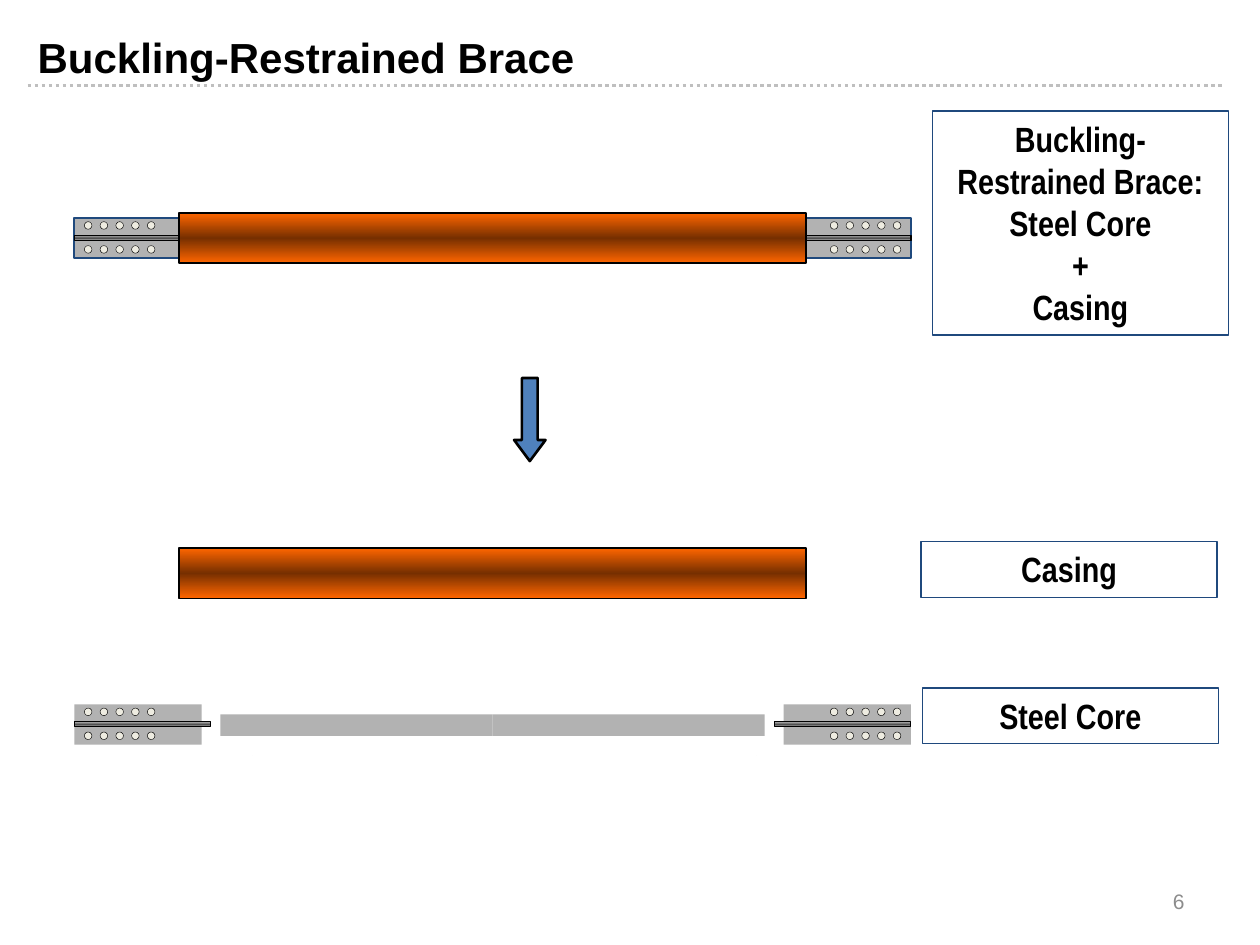
from copy import deepcopy

from lxml.etree import SubElement
from pptx import Presentation
from pptx.dml.color import RGBColor
from pptx.enum.dml import MSO_LINE
from pptx.enum.shapes import MSO_CONNECTOR, MSO_SHAPE
from pptx.enum.text import MSO_ANCHOR, PP_ALIGN
from pptx.oxml.ns import qn
from pptx.util import Inches, Pt

BLACK = RGBColor(0x00, 0x00, 0x00)
RULE_GREY = RGBColor(0xBF, 0xBF, 0xBF)
NUMBER_GREY = RGBColor(0x8C, 0x8C, 0x8C)
STEEL = RGBColor(0xB2, 0xB2, 0xB2)
DARK_STEEL = RGBColor(0x52, 0x52, 0x52)
ORANGE = RGBColor(0xFF, 0x66, 0x00)
BROWN = RGBColor(0x76, 0x2F, 0x00)
CREAM = RGBColor(0xEE, 0xEC, 0xE1)
NAVY = RGBColor(0x1F, 0x49, 0x7D)
BLUE = RGBColor(0x4F, 0x81, 0xBD)

TITLE = "Buckling-Restrained Brace"
PAGE_NUMBER = "6"
LABELS = [
    ("Buckling- Restrained Brace:\vSteel Core\v+\vCasing", (7.4, 0.88, 2.35, 1.78)),
    ("Casing", (7.31, 4.3, 2.35, 0.44)),
    ("Steel Core", (7.32, 5.46, 2.35, 0.44)),
]
BRACE_TOP = 1.73
CORE_TOP = 5.59
CASING_TOPS = {"brace": 1.69, "separate": 4.35}
CENTER = 3.91
HOLE_SIZE = 0.06
HOLE_COLUMNS = [0.67 + 0.125 * column for column in range(5)]
HOLE_ROWS = [0.03, 0.22]


def style(shape, fill=None, line=None, width=1):
    shape.shadow.inherit = False
    if fill is None:
        shape.fill.background()
    elif isinstance(fill, RGBColor):
        shape.fill.solid()
        shape.fill.fore_color.rgb = fill
    else:
        edge, middle = fill
        shape.fill.gradient()
        shape.fill.gradient_angle = 90
        stop_list = shape._element.spPr.find(qn("a:gradFill")).find(qn("a:gsLst"))
        stop_list.append(deepcopy(stop_list[0]))
        stops = zip(shape.fill.gradient_stops, (edge, middle, edge), (0, 0.5, 1))
        for stop, color, position in stops:
            stop.color.rgb = color
            stop.position = position
    if line is None:
        shape.line.fill.background()
    else:
        shape.line.color.rgb = line
        shape.line.width = Pt(width)


def add_shape(shapes, kind, box, *look):
    shape = shapes.add_shape(kind, *map(Inches, box))
    style(shape, *look)
    return shape


def add_casing(shapes, top):
    add_shape(shapes, MSO_SHAPE.RECTANGLE, (1.42, top, 4.98, 0.4), (ORANGE, BROWN), BLACK, 1)


def add_core_half(shapes, top, mirrored, outline, stiffener_width):
    def place(left, offset, width, height):
        x = 2 * CENTER - left - width if mirrored else left
        return x, top + offset, width, height

    def taper_point(x, offset):
        return (2 * CENTER - x if mirrored else x), top + offset

    steel_look = (STEEL, outline, 1.25)
    add_shape(shapes, MSO_SHAPE.RECTANGLE, place(1.75, 0.08, 2.16, 0.17), *steel_look)
    corners = [taper_point(*p) for p in [(1.6, 0.32), (1.76, 0.24), (1.76, 0.08), (1.6, 0)]]
    builder = shapes.build_freeform(*corners[0], scale=Inches(1))
    builder.add_line_segments(corners[1:], close=True)
    style(builder.convert_to_shape(), *steel_look)
    add_shape(shapes, MSO_SHAPE.RECTANGLE, place(0.59, 0, 1.01, 0.32), *steel_look)
    add_shape(shapes, MSO_SHAPE.RECTANGLE, place(0.59, 0.14, 1.08, 0.04),
              (STEEL, DARK_STEEL), BLACK, stiffener_width)
    for row in HOLE_ROWS:
        for column in HOLE_COLUMNS:
            add_shape(shapes, MSO_SHAPE.OVAL, place(column, row, HOLE_SIZE, HOLE_SIZE),
                      CREAM, BLACK, 0.25)


def add_core(slide, top, outline, stiffener_width):
    group = slide.shapes.add_group_shape()
    for mirrored in (False, True):
        add_core_half(group.shapes, top, mirrored, outline, stiffener_width)
    return group


def write(shape, text, size, font, color, bold, alignment, anchor):
    frame = shape.text_frame
    frame.word_wrap = True
    frame.vertical_anchor = anchor
    frame.text = text
    paragraph = frame.paragraphs[0]
    paragraph.alignment = alignment
    paragraph.font.size = Pt(size)
    paragraph.font.name = font
    paragraph.font.bold = bold
    paragraph.font.color.rgb = color


def main():
    presentation = Presentation()
    presentation.slide_width = Inches(10)
    presentation.slide_height = Inches(7.5)
    slide = presentation.slides.add_slide(presentation.slide_layouts[6])
    shapes = slide.shapes

    rule = shapes.add_connector(MSO_CONNECTOR.STRAIGHT, *map(Inches, (0.22, 0.68, 9.72, 0.68)))
    rule.line.color.rgb = RULE_GREY
    rule.line.width = Pt(2)
    rule.line.dash_style = MSO_LINE.ROUND_DOT
    SubElement(rule._element.spPr, qn("a:effectLst"))

    add_core(slide, CORE_TOP, None, 0.5)
    brace = add_core(slide, BRACE_TOP, NAVY, 0.75)
    add_casing(brace.shapes, CASING_TOPS["brace"])
    add_casing(shapes, CASING_TOPS["separate"])

    arrow = add_shape(shapes, MSO_SHAPE.DOWN_ARROW, (4.08, 3, 0.25, 0.66), BLUE, BLACK, 1.5)
    arrow.adjustments[0] = 0.5
    arrow.adjustments[1] = 0.67

    for text, box in LABELS:
        label = add_shape(shapes, MSO_SHAPE.RECTANGLE, box, None, NAVY, 0.75)
        write(label, text, 20, "Arial Narrow", BLACK, True, PP_ALIGN.CENTER, MSO_ANCHOR.TOP)

    title = shapes.add_textbox(*map(Inches, (0.2, 0.16, 8.98, 0.44)))
    write(title, TITLE, 24, "Arial", BLACK, True, PP_ALIGN.LEFT, MSO_ANCHOR.TOP)
    title.text_frame.margin_top = Inches(0.09)
    number = shapes.add_textbox(*map(Inches, (7.17, 6.95, 2.33, 0.4)))
    write(number, PAGE_NUMBER, 12, "Arial", NUMBER_GREY, False, PP_ALIGN.RIGHT, MSO_ANCHOR.MIDDLE)

    presentation.save("out.pptx")


if __name__ == "__main__":
    main()
